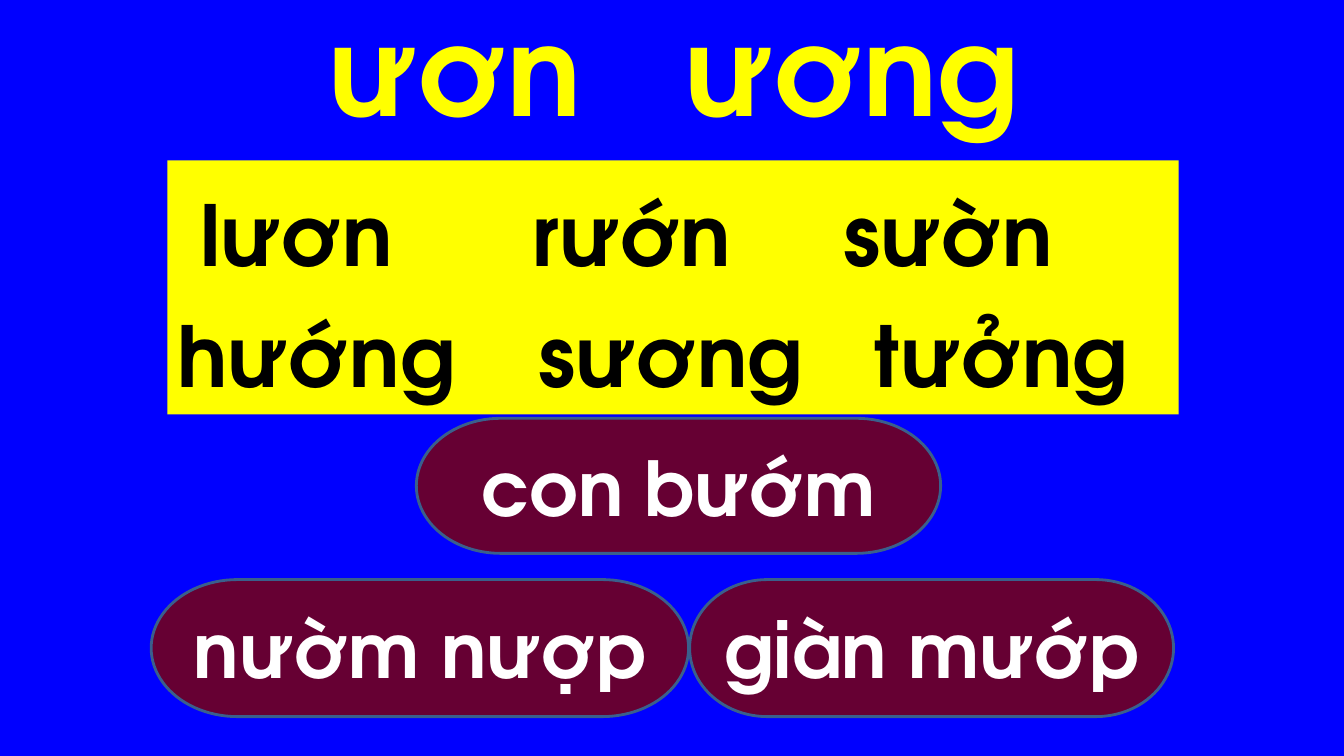
from dataclasses import dataclass
from lxml.etree import SubElement as Sub
from pptx import Presentation
from pptx.dml.color import RGBColor as RGB
from pptx.enum.shapes import MSO_SHAPE as Shape
from pptx.enum.text import MSO_ANCHOR as Anchor, MSO_AUTO_SIZE as Auto, PP_ALIGN as Align
from pptx.oxml.ns import qn
from pptx.util import Inches, Pt


@dataclass(frozen=True)
class Theme:
    font: str = "TeX Gyre Adventor"
    blue: str = "0000FF"
    yellow: str = "FFFF00"
    black: str = "000000"
    white: str = "FFFFFF"
    wine: str = "660033"
    edge: str = "3A5F8C"
    title: int = 88
    word: int = 60
    gap: int = 72
    pill: int = 54


SIZE = (13.33, 7.5)
TITLE = [[("ươn", 1.66), ("ương", 5.19)]]
WORDS = [
    [("lươn", 0.23), ("rướn", 3.52), ("sườn", 6.61)],
    [("hướng", 0), ("sương", 3.58), ("tưởng", 6.92)],
]
TITLE_BOX = (1.5, -0.12, 9.88, 1.58)
WORD_BOX = (1.66, 1.59, 10.03, 2.52)
PILLS = [
    ("con bướm", (4.13, 4.15, 5.2, 1.34)),
    ("giàn mướp", (6.84, 5.75, 4.8, 1.36)),
    ("nườm nượp", (1.5, 5.75, 5.33, 1.36)),
]
theme = Theme()


def place(box):
    return [Inches(n) for n in box]


def style(para, size, color):
    font = para.font
    font.name, font.size, font.bold = theme.font, Pt(size), True
    font.color.rgb = RGB.from_string(color)


def paint(shape, color):
    shape.shadow.inherit = False
    shape.fill.solid()
    shape.fill.fore_color.rgb = RGB.from_string(color)


def write(frame, rows, size, color):
    frame.word_wrap = True
    frame.auto_size = Auto.SHAPE_TO_FIT_TEXT
    frame.vertical_anchor = Anchor.TOP
    for i, row in enumerate(rows):
        para = frame.add_paragraph() if i else frame.paragraphs[0]
        para.alignment = Align.LEFT
        tabs = Sub(para._p.get_or_add_pPr(), qn("a:tabLst"))
        for word, left in row:
            if left:
                Sub(tabs, qn("a:tab"), pos=str(Inches(left)), algn="l")
                tab = para.add_run()
                tab.text = "\t"
                tab.font.size = Pt(theme.gap)
            para.add_run().text = word
        style(para, size, color)


deck = Presentation()
deck.slide_width, deck.slide_height = place(SIZE)
slide = deck.slides.add_slide(deck.slide_layouts[6])
back = slide.background.fill
back.solid()
back.fore_color.rgb = RGB.from_string(theme.blue)

panel = slide.shapes.add_shape(Shape.RECTANGLE, *place(WORD_BOX))
paint(panel, theme.yellow)
panel.line.fill.background()
write(panel.text_frame, WORDS, theme.word, theme.black)

title = slide.shapes.add_textbox(*place(TITLE_BOX))
write(title.text_frame, TITLE, theme.title, theme.yellow)

for text, box in PILLS:
    pill = slide.shapes.add_shape(Shape.FLOWCHART_TERMINATOR, *place(box))
    paint(pill, theme.wine)
    pill.line.color.rgb = RGB.from_string(theme.edge)
    pill.line.width = Pt(2)
    frame = pill.text_frame
    frame.word_wrap = True
    frame.vertical_anchor = Anchor.MIDDLE
    para = frame.paragraphs[0]
    para.alignment = Align.CENTER
    para.add_run().text = text
    style(para, theme.pill, theme.white)

deck.save("out.pptx")
